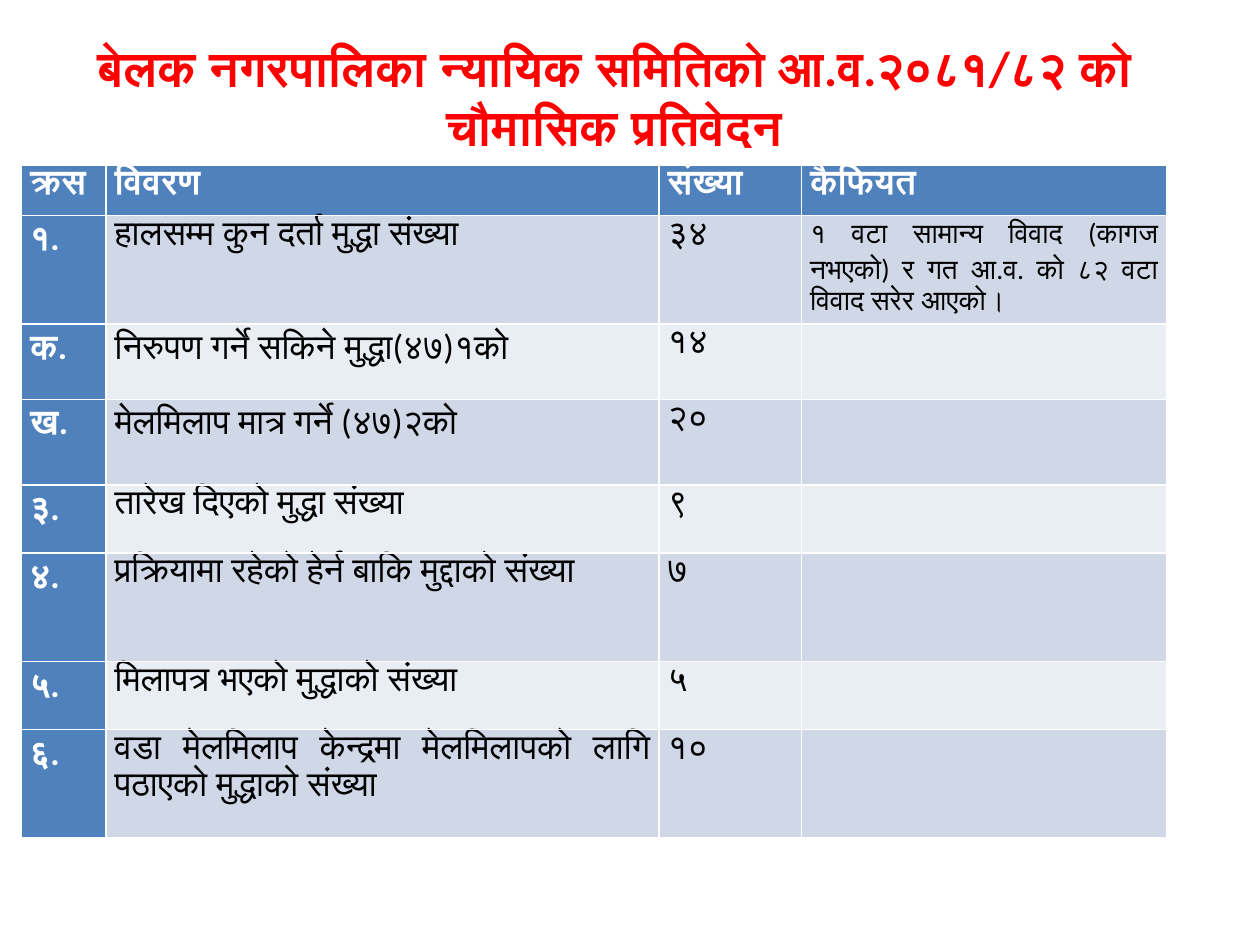
from dataclasses import dataclass

from pptx import Presentation, util as u
from pptx.dml.color import RGBColor
from pptx.enum import text


@dataclass(frozen=True)
class Theme:
    font: str = "Calibri"
    title: str = "FF0000"
    head: str = "4F81BD"
    head_text: str = "FFFFFF"
    body_text: str = "000000"
    bands: tuple[str, str] = ("D0D8E8", "E9EDF4")
    title_size: int = 28
    cell_size: int = 20
    remark_size: int = 16


@dataclass(frozen=True)
class CaseRow:
    height: float
    number: str
    detail: str
    count: str
    remark: str = ""


THEME = Theme()
WIDTH, HEIGHT = u.Inches(10), u.Inches(7.5)
TITLE = "बेलक नगरपालिका न्यायिक समितिको आ.व.२०८१/८२ को चौमासिक प्रतिवेदन"
COLUMN_PCT = (6.7, 43.9, 11.3, 29)
ROWS = (
    CaseRow(5.33, "क्रस", "विवरण", "संख्या", "कैफियत"),
    CaseRow(11.47, "१.", "हालसम्म कुन दर्ता मुद्धा संख्या", "३४",
            "१ वटा सामान्य विवाद (कागज नभएको) र गत आ.व. को ८२ वटा विवाद सरेर आएको।"),
    CaseRow(8, "क.", "निरुपण गर्ने सकिने मुद्धा(४७)१को", "१४"),
    CaseRow(9.07, "ख.", "मेलमिलाप मात्र गर्ने (४७)२को", "२०"),
    CaseRow(7.2, "३.", "तारेख दिएको मुद्धा संख्या", "९"),
    CaseRow(11.47, "४.", "प्रक्रियामा रहेको हेर्न बाकि मुद्दाको संख्या", "७"),
    CaseRow(7.2, "५.", "मिलापत्र भएको मुद्धाको संख्या", "५"),
    CaseRow(11.47, "६.", "वडा मेलमिलाप केन्द्रमा मेलमिलापको लागि पठाएको मुद्धाको संख्या", "१०"),
)


def across(pct: float) -> int:
    return round(WIDTH * pct / 100)


def down(pct: float) -> int:
    return round(HEIGHT * pct / 100)


def style(p, size: int, color: str, bold: bool, align) -> None:
    p.alignment = align
    for font in (p.font, *(r.font for r in p.runs)):
        font.name = THEME.font
        font.size = u.Pt(size)
        font.bold = bold
        font.color.rgb = RGBColor.from_string(color)


def add_title(s) -> None:
    tf = s.shapes.add_textbox(0, down(3.33), across(97.5), down(13.87)).text_frame
    tf.word_wrap = True
    tf.auto_size = text.MSO_AUTO_SIZE.SHAPE_TO_FIT_TEXT
    tf.text = TITLE
    style(tf.paragraphs[0], THEME.title_size, THEME.title, True, text.PP_ALIGN.CENTER)


def fill_cell(cell, content: str, row: int, col: int) -> None:
    is_head = row == 0 or col == 0
    cell.margin_left = cell.margin_right = u.Inches(0.07)
    cell.margin_top = cell.margin_bottom = 0
    cell.fill.solid()
    cell.fill.fore_color.rgb = RGBColor.from_string(
        THEME.head if is_head else THEME.bands[(row - 1) % 2])
    cell.text = content
    p = cell.text_frame.paragraphs[0]
    p.line_spacing = 1.05
    size = THEME.remark_size if col == 3 and not is_head else THEME.cell_size
    color = THEME.head_text if is_head else THEME.body_text
    style(p, size, color, is_head, text.PP_ALIGN.JUSTIFY)


def add_cases(s) -> None:
    frame = s.shapes.add_table(
        len(ROWS), len(COLUMN_PCT), across(1.7), down(17.47),
        across(sum(COLUMN_PCT)), down(sum(row.height for row in ROWS)))
    table = frame.table
    table.first_col = True
    for column, pct in zip(table.columns, COLUMN_PCT):
        column.width = across(pct)
    for i, row in enumerate(ROWS):
        table.rows[i].height = down(row.height)
        for j, content in enumerate((row.number, row.detail, row.count, row.remark)):
            fill_cell(table.cell(i, j), content, i, j)


def main() -> None:
    prs = Presentation()
    prs.slide_width, prs.slide_height = WIDTH, HEIGHT
    s = prs.slides.add_slide(prs.slide_layouts[6])
    add_title(s)
    add_cases(s)
    prs.save("out.pptx")


if __name__ == "__main__":
    main()
